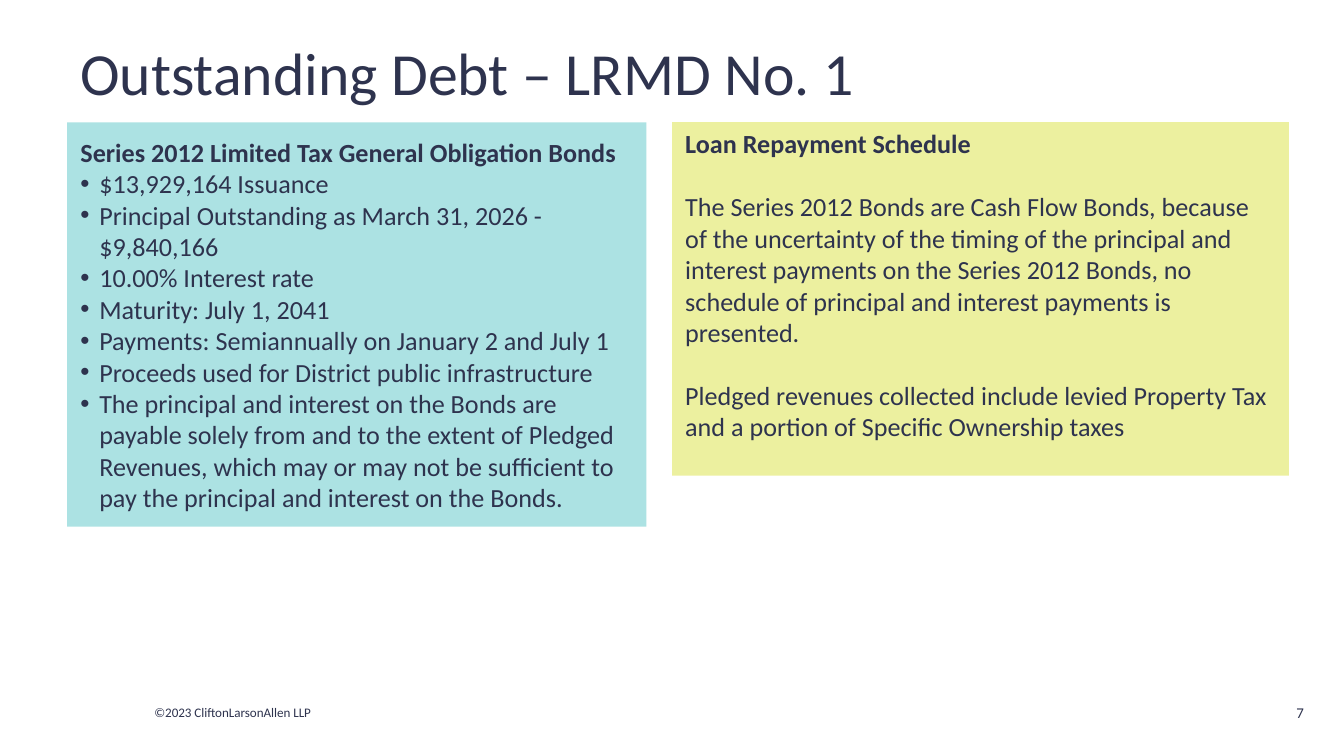
import pptx
import pptx.util
import pptx.dml.color
import pptx.enum.shapes
import pptx.enum.text
import pptx.oxml.ns
import lxml.etree

COLORS = {"ink": "2E334E", "teal": "7DD2D3", "lime": "E2E868"}
FONT = "Calibri"
BODY_SIZE = 14
LINE_GAP = 17
BULLET_INDENT = pptx.util.Inches(0.14)
ANCHOR = pptx.enum.text.MSO_ANCHOR
ALIGN = pptx.enum.text.PP_ALIGN

presentation = pptx.Presentation()
presentation.slide_width = pptx.util.Inches(10)
presentation.slide_height = pptx.util.Inches(5.625)
column = presentation.slide_width / 100
row = presentation.slide_height / 56.25
slide = presentation.slides.add_slide(presentation.slide_layouts[6])


def add_box(left, top, width, height, fill=None):
    place = [int(left * column), int(top * row), int(width * column), int(height * row)]
    if fill is None:
        shape = slide.shapes.add_textbox(*place)
    else:
        shape = slide.shapes.add_shape(pptx.enum.shapes.MSO_SHAPE.RECTANGLE, *place)
        shape.shadow.inherit = False
        shape.line.fill.background()
        shape.fill.solid()
        shape.fill.fore_color.rgb = pptx.dml.color.RGBColor.from_string(COLORS[fill])
        color = shape.fill._xPr.find(".//" + pptx.oxml.ns.qn("a:srgbClr"))
        lxml.etree.SubElement(color, pptx.oxml.ns.qn("a:alpha"), val="63000")
    shape.text_frame.word_wrap = True
    shape.text_frame.vertical_anchor = ANCHOR.MIDDLE
    return shape.text_frame


def write(paragraph, text, size, bold=False, align=ALIGN.LEFT):
    paragraph.text = text
    paragraph.alignment = align
    paragraph.font.name = FONT
    paragraph.font.size = pptx.util.Pt(size)
    paragraph.font.bold = bold
    paragraph.font.color.rgb = pptx.dml.color.RGBColor.from_string(COLORS["ink"])


labels = [
    ("©2023 CliftonLarsonAllen LLP", 7, ALIGN.LEFT, (10.5, 51.9, 15.1, 2.2)),
    ("Outstanding Debt – LRMD No. 1", 32, ALIGN.LEFT, (5, 1.6, 90, 7.5)),
    ("7", 8, ALIGN.RIGHT, (93.7, 51.1, 4.3, 3.8)),
]
for text, size, align, place in labels:
    write(add_box(*place).paragraphs[0], text, size, align=align)

bond_facts = [
    "$13,929,164 Issuance",
    "Principal Outstanding as March 31, 2026 - $9,840,166",
    "10.00% Interest rate",
    "Maturity: July 1, 2041",
    "Payments: Semiannually on January 2 and July 1",
    "Proceeds used for District public infrastructure",
    "The principal and interest on the Bonds are payable solely from and to the extent of "
    "Pledged Revenues, which may or may not be sufficient to pay the principal and interest "
    "on the Bonds.",
]
bonds = add_box(5, 9.1, 43.1, 30.1, "teal")
write(bonds.paragraphs[0], "Series 2012 Limited Tax General Obligation Bonds", BODY_SIZE, bold=True)
for fact in bond_facts:
    paragraph = bonds.add_paragraph()
    properties = paragraph._p.get_or_add_pPr()
    properties.set("marL", str(BULLET_INDENT))
    properties.set("indent", str(-BULLET_INDENT))
    lxml.etree.SubElement(properties, pptx.oxml.ns.qn("a:buFont"), typeface="Arial")
    lxml.etree.SubElement(properties, pptx.oxml.ns.qn("a:buChar"), char="•")
    write(paragraph, fact, BODY_SIZE)

repayment_notes = [
    "The Series 2012 Bonds are Cash Flow Bonds, because of the uncertainty of the timing of "
    "the principal and interest payments on the Series 2012 Bonds, no schedule of principal "
    "and interest payments is presented.",
    "Pledged revenues collected include levied Property Tax and a portion of Specific "
    "Ownership taxes",
]
repayment = add_box(50, 9.1, 45.9, 26.3, "lime")
repayment.vertical_anchor = ANCHOR.TOP
repayment.margin_top = pptx.util.Inches(0.04)
write(repayment.paragraphs[0], "Loan Repayment Schedule", BODY_SIZE, bold=True)
for note in repayment_notes:
    paragraph = repayment.add_paragraph()
    paragraph.space_before = pptx.util.Pt(LINE_GAP)
    write(paragraph, note, BODY_SIZE)

presentation.save("out.pptx")
